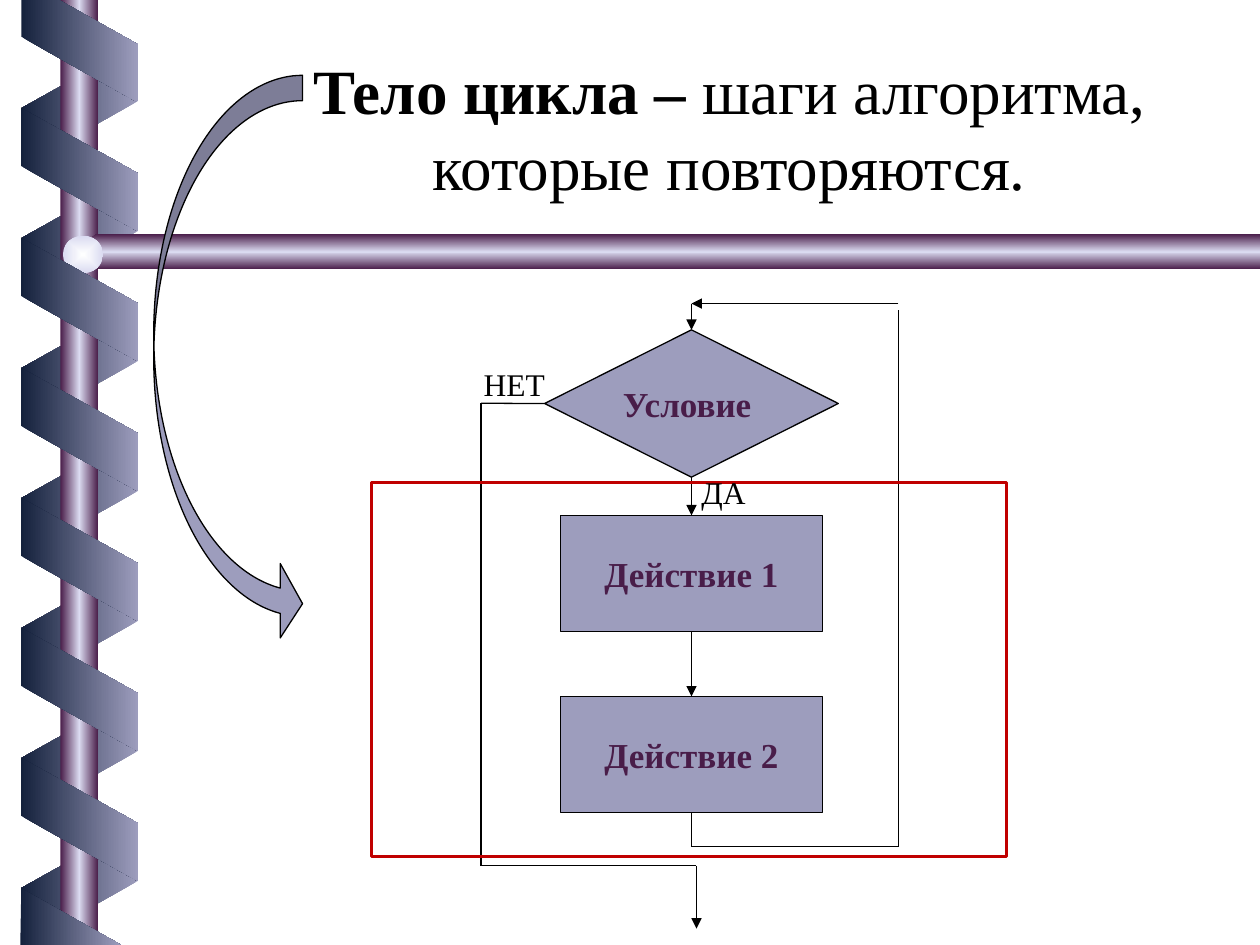
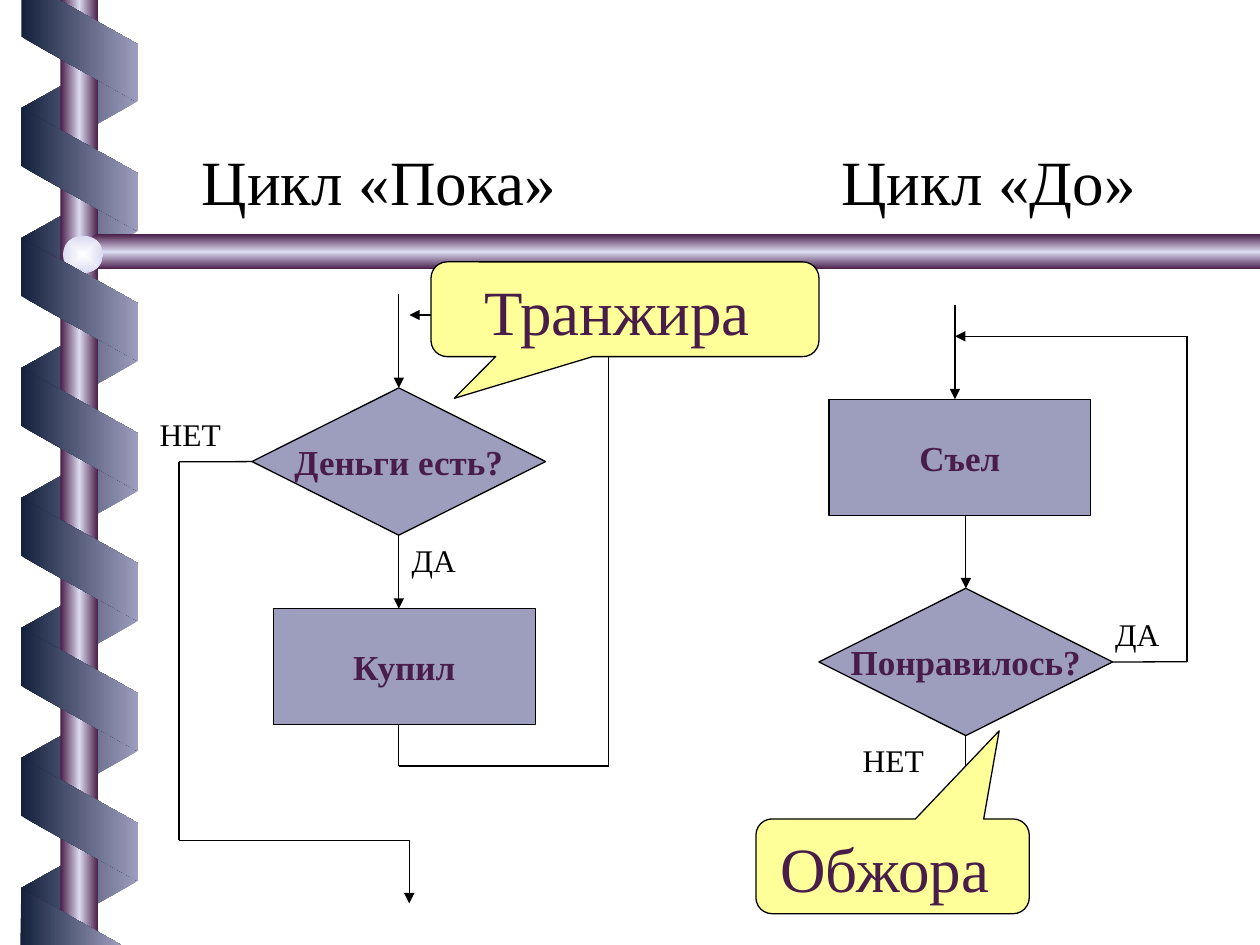
import dataclasses
import itertools

import pptx
import pptx.dml.color
import pptx.enum.shapes
import pptx.enum.text
import pptx.oxml
import pptx.oxml.ns
import pptx.util

Cm = pptx.util.Cm
Pt = pptx.util.Pt
Kind = pptx.enum.shapes.MSO_SHAPE
Align = pptx.enum.text.PP_ALIGN
Anchor = pptx.enum.text.MSO_ANCHOR

FONT = "Times New Roman"
BLACK, PLUM, LILAC, NAVY = "000000", "491D49", "9D9DBD", "14213C"
PALE, YELLOW, RED = "DBDBF1", "FFFF99", "C00000"
WIDE, HIGH = 25.4, 19.05
RHOMB = (5.92, 2.97)
STEP = (5.28, 2.34)
CLOUD_H = 1.91
TOP, LEFT, BOTTOM, RIGHT = range(4)


def color(code):
    return pptx.dml.color.RGBColor.from_string(code)


def xml(text):
    head, tail = text.split(">", 1) if "/>" not in text.split(">")[0] + ">" else (text[:-2], None)
    names = pptx.oxml.ns.nsdecls("a")
    full = f"{head} {names}/>" if tail is None else f"{head} {names}>{tail}"
    return pptx.oxml.parse_xml(full)


def write(frame, text, size=36, ink=BLACK, bold=False, align=Align.LEFT,
          anchor=Anchor.TOP, wrap=True):
    """Fill a text frame; text is a string or a list of (string, bold) pairs."""
    frame.word_wrap = wrap
    frame.auto_size = pptx.enum.text.MSO_AUTO_SIZE.NONE
    frame.vertical_anchor = anchor
    para = frame.paragraphs[0]
    para.alignment = align
    for part, heavy in [(text, bold)] if isinstance(text, str) else text:
        run = para.add_run()
        run.text = part
        run.font.name, run.font.size, run.font.bold = FONT, Pt(size), heavy
        run.font.color.rgb = color(ink)


def blend(shape, codes, angle=0, round_out=False):
    """Give a shape an even gradient that does not turn with it."""
    last = len(codes) - 1
    stops = "".join(
        f'<a:gs pos="{100000 * n // last}"><a:srgbClr val="{code}"/></a:gs>'
        for n, code in enumerate(codes))
    course = f'<a:lin ang="{angle * 60000}" scaled="0"/>'
    if round_out:
        course = ('<a:path path="shape"><a:fillToRect l="50000" t="50000" '
                  'r="50000" b="50000"/></a:path>')
    shape.fill.background()
    props = shape.element.spPr
    blank = props.find(pptx.oxml.ns.qn("a:noFill"))
    props.replace(blank, xml(
        f'<a:gradFill rotWithShape="0"><a:gsLst>{stops}</a:gsLst>{course}</a:gradFill>'))
    shape.line.fill.background()
    shape.shadow.inherit = False


@dataclasses.dataclass
class Area:
    """A region of a slide; all lengths are centimetres from its corner."""
    slide: object
    x: float = 0
    y: float = 0

    def spot(self, x, y):
        return Cm(self.x + x), Cm(self.y + y)

    def shape(self, kind, x, y, w, h, fill=None, line=BLACK, width=0.75, adjust=()):
        item = self.slide.shapes.add_shape(kind, *self.spot(x, y), Cm(w), Cm(h))
        item.shadow.inherit = False
        if fill:
            item.fill.solid()
            item.fill.fore_color.rgb = color(fill)
        else:
            item.fill.background()
        item.line.color.rgb = color(line)
        item.line.width = Pt(width)
        for n, value in enumerate(adjust):
            item.adjustments[n] = value
        return item

    def node(self, kind, x, y, size, text):
        item = self.shape(kind, x, y, *size, fill=LILAC)
        write(item.text_frame, text, size=20, ink=PLUM, bold=True,
              align=Align.CENTER, anchor=Anchor.MIDDLE, wrap=False)
        return item

    def test(self, x, y, text):
        return self.node(Kind.FLOWCHART_DECISION, x, y, RHOMB, text)

    def step(self, x, y, text):
        return self.node(Kind.FLOWCHART_PROCESS, x, y, STEP, text)

    def cloud(self, x, y, w, text, adjust):
        item = self.shape(Kind.ROUNDED_RECTANGULAR_CALLOUT, x, y, w, CLOUD_H,
                          fill=YELLOW, adjust=adjust)
        write(item.text_frame, text, ink=PLUM, align=Align.CENTER)

    def label(self, x, y, text, w=3.18, h=1.02, size=18):
        item = self.slide.shapes.add_textbox(*self.spot(x, y), Cm(w), Cm(h))
        write(item.text_frame, text, size=size)

    def title(self, x, y, w, h, text, **look):
        item = self.slide.shapes.title
        item.left, item.top = self.spot(x, y)
        item.width, item.height = Cm(w), Cm(h)
        write(item.text_frame, text, **look)

    def route(self, *points, start=None, stop=None, tip=True):
        """Chain straight lines through points; start and stop are (shape, side)."""
        lines = []
        for a, b in itertools.pairwise(points):
            item = self.slide.shapes.add_connector(
                pptx.enum.shapes.MSO_CONNECTOR.STRAIGHT, *self.spot(*a), *self.spot(*b))
            item.line.color.rgb = color(BLACK)
            item.line.width = Pt(0.75)
            item.element.spPr.append(xml("<a:effectLst/>"))
            lines.append(item)
        if start:
            lines[0].begin_connect(*start)
        if stop:
            lines[-1].end_connect(*stop)
        if tip:
            lines[-1].get_or_add_ln().append(xml('<a:tailEnd type="triangle"/>'))


def ribbon(area, count, top, turn, codes, flip=False):
    for n in range(count):
        item = area.shape(Kind.PARALLELOGRAM, 0.36, top + 2.62 * n, 2.49, 2.36, adjust=[0.56])
        item.rotation = turn
        if flip:
            item.element.spPr.xfrm.set("flipH", "1")
        blend(item, codes)


def scrap(area, points):
    """Draw a piece of ribbon cut off by the slide's edge."""
    first, *rest = [area.spot(*point) for point in points]
    maker = area.slide.shapes.build_freeform(*first)
    maker.add_line_segments(rest, close=True)
    blend(maker.convert_to_shape(), [NAVY, LILAC])


def decor(area):
    ribbon(area, 7, 0.93, 90, [LILAC, NAVY], flip=True)
    tube = [PLUM, PALE, PLUM]
    blend(area.shape(Kind.RECTANGLE, 1.22, 0, 0.76, HIGH), tube)
    bar = area.shape(Kind.PENTAGON, 1.52, 4.72, WIDE - 1.52, 0.71, adjust=[0.59])
    bar.element.spPr.xfrm.set("flipH", "1")
    blend(bar, tube, angle=90)
    blend(area.shape(Kind.OVAL, 1.27, 4.75, 0.81, 0.76), ["FEFFFF", PALE], round_out=True)
    ribbon(area, 6, 2.24, 270, [NAVY, LILAC])
    scrap(area, [(0.43, 0), (0.43, 0.74), (2.77, 2.06), (2.77, 0.89), (1.19, 0)])
    scrap(area, [(2.44, HIGH), (0.43, 17.91), (0.41, HIGH)])


def share(slide, master):
    """Move the drawn decor from a slide to the master."""
    parts = [item for item in slide.shapes if not item.is_placeholder]
    for n, item in enumerate(parts, 100):
        item.element.nvSpPr.cNvPr.set("id", str(n))
        master.shapes.element.append(item.element)


def body_loop(area):
    axis, back, out = 6.45, 10.62, 2.21
    test = area.test(3.49, 0.53, "Условие ")
    one = area.step(3.81, 4.27, "Действие 1")
    two = area.step(3.81, 7.92, "Действие 2")
    area.route((axis, 0), (axis, 0.53), stop=(test, TOP))
    area.route((axis, 3.5), (axis, 4.27), start=(test, BOTTOM), stop=(one, TOP))
    area.route((axis, 6.61), (axis, 7.92), start=(one, BOTTOM), stop=(two, TOP))
    area.route((axis, 10.26), (axis, 10.95), (back, 10.95), (back, 0.13),
               start=(two, BOTTOM), tip=False)
    area.route((back, 0), (axis, 0))
    area.route((3.49, 2.01), (out, 2.01), (out, 11.33), (6.55, 11.33), (6.55, 12.6),
               start=(test, LEFT))
    area.label(2.01, 1.12, "НЕТ", w=2.01)
    area.shape(Kind.RECTANGLE, 0, 3.61, 12.8, 7.54, line=RED, width=1.5)
    area.label(6.4, 3.3, "ДА", w=1.6)


def while_loop(area):
    axis, back, out = 5.07, 9.3, 0.64
    area.title(0.84, 0, 8.69, 1.78, "Цикл «Пока»")
    test = area.test(2.11, 5.08, "Деньги есть?")
    area.step(2.54, 9.53, "Купил")
    area.route((axis, 3.18), (axis, 5.08), stop=(test, TOP))
    area.route((axis, 8.05), (axis, 9.53), start=(test, BOTTOM))
    area.route((axis, 11.87), (axis, 12.7), (back, 12.7), (back, 3.61), (5.28, 3.61))
    area.route((2.11, 6.57), (out, 6.57), (out, 14.2), (5.28, 14.2), (5.28, 15.47),
               start=(test, LEFT))
    area.label(5.08, 8.05, "ДА")
    area.label(0, 5.51, "НЕТ")
    area.cloud(5.72, 2.54, 7.82, "Транжира ", [-0.44, 0.94, 0.17])


def until_loop(area):
    entry, axis, back = 4.01, 4.23, 8.69
    area.label(1.47, 0, "Цикл «До»", w=8.69, h=1.78, size=36)
    area.step(1.47, 5.31, "Съел")
    test = area.test(1.27, 9.12, " Понравилось? ")
    area.route((entry, 3.4), (entry, 5.31))
    area.route((axis, 7.65), (axis, 9.12), stop=(test, TOP))
    area.route((7.19, 10.6), (back, 10.6), (back, 4.04), (entry, 4.04), start=(test, RIGHT))
    area.route((axis, 12.09), (axis, 13.77), start=(test, BOTTOM))
    area.label(6.99, 9.53, "ДА")
    area.label(1.9, 12.07, "НЕТ")
    area.cloud(0, 13.77, 5.51, "Обжора ", [0.39, -1.43, 0.17])


def main():
    deck = pptx.Presentation()
    deck.slide_width, deck.slide_height = Cm(WIDE), Cm(HIGH)
    layout = deck.slide_layouts.get_by_name("Title Only")
    first, second = [deck.slides.add_slide(layout) for _ in range(2)]

    decor(Area(first))
    share(first, deck.slide_master)

    page = Area(first)
    page.title(5.51, 0.91, 18.39, 3.33,
               [("Тело цикла –", True), (" шаги алгоритма, которые повторяются.", False)],
               align=Align.CENTER)
    body_loop(Area(first, 7.49, 6.12))
    page.shape(Kind.CURVED_RIGHT_ARROW, 3.1, 1.52, 3, 11.4, fill=LILAC,
               adjust=[0.17, 0.5, 0.15])

    while_loop(Area(second, 2.97, 2.74))
    until_loop(Area(second, 15.24, 2.74))
    deck.save("out.pptx")


if __name__ == "__main__":
    main()
